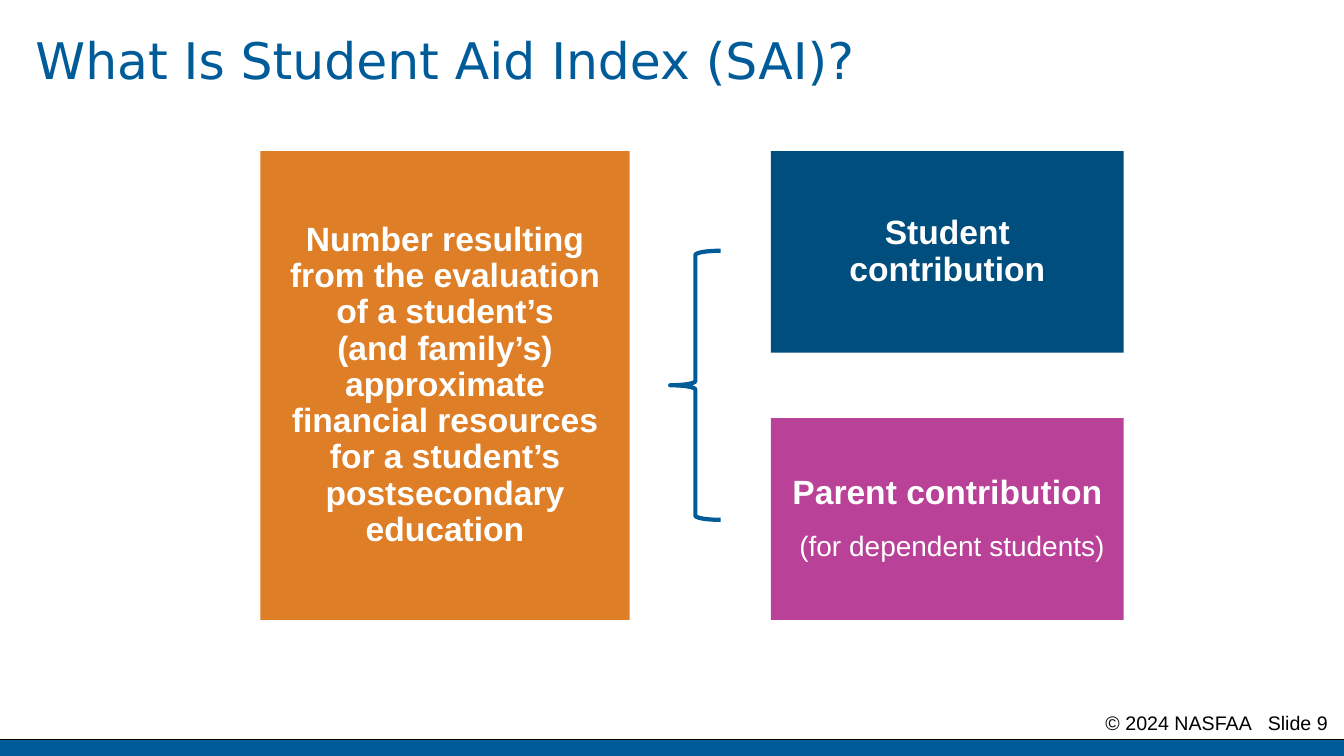
from dataclasses import dataclass

from lxml.etree import SubElement
from pptx import Presentation
from pptx.dml.color import RGBColor as Rgb
from pptx.enum.shapes import MSO_CONNECTOR as Link, MSO_SHAPE as Form
from pptx.enum.text import MSO_ANCHOR as Anchor, MSO_AUTO_SIZE as Fit, PP_ALIGN as Align
from pptx.oxml.ns import qn
from pptx.shapes.autoshape import Shape
from pptx.slide import Slide
from pptx.text.text import _Paragraph as Para
from pptx.util import Cm, Pt


@dataclass(frozen=True)
class Theme:
    blue: str = "005B99"
    navy: str = "004E7D"
    orange: str = "DE7E26"
    pink: str = "B94197"
    white: str = "FFFFFF"
    black: str = "000000"
    head: str = "DejaVu Sans"
    body: str = "Arial"
    title: int = 36
    main: int = 24
    sub: int = 20
    foot: int = 14


@dataclass(frozen=True)
class Line:
    text: str
    size: int
    bold: bool = True
    indent: float = 0


@dataclass(frozen=True)
class Card:
    left: float
    top: float
    width: float
    height: float
    fill: str
    lines: tuple[Line, ...]


THEME = Theme()
WIDE, HIGH = 33.87, 19.05
TOP, ROW, GAP = 3.81, 5.08, 1.65
RIGHT, SPAN = 19.43, 8.89
BASE = 18.63

CARDS = (
    Card(6.56, TOP, 9.31, 2 * ROW + GAP, THEME.orange, (
        Line("Number resulting from the evaluation of a student’s\v(and family’s) "
             "approximate financial resources for a student’s postsecondary education",
             THEME.main),)),
    Card(RIGHT, TOP, SPAN, ROW, THEME.navy, (
        Line("Student contribution", THEME.main),)),
    Card(RIGHT, TOP + ROW + GAP, SPAN, ROW, THEME.pink, (
        Line("Parent contribution", THEME.main),
        Line("(for dependent students)", THEME.sub, False, 0.24))),
)


def write(para: Para, text: str, size: int, color: str,
          face: str = THEME.body, bold: bool = False) -> None:
    for i, part in enumerate(text.split("\v")):
        if i:
            para.add_line_break()
        run = para.add_run()
        run.text = part
        font = run.font
        font.name, font.size, font.bold = face, Pt(size), bold
        font.color.rgb = Rgb.from_string(color)


def block(slide: Slide, left: float, top: float, width: float,
          height: float, fill: str) -> Shape:
    shape = slide.shapes.add_shape(Form.RECTANGLE, Cm(left), Cm(top), Cm(width), Cm(height))
    shape.shadow.inherit = False
    shape.fill.solid()
    shape.fill.fore_color.rgb = Rgb.from_string(fill)
    shape.line.fill.background()
    return shape


def draw(slide: Slide, card: Card) -> None:
    frame = block(slide, card.left, card.top, card.width, card.height, card.fill).text_frame
    frame.word_wrap = True
    frame.vertical_anchor = Anchor.MIDDLE
    frame.margin_left = frame.margin_right = Cm(0.38)
    frame.margin_top = frame.margin_bottom = Cm(0.38)
    for i, line in enumerate(card.lines):
        para = frame.add_paragraph() if i else frame.paragraphs[0]
        para.alignment = Align.CENTER
        para.line_spacing = 0.9
        if i:
            para.space_before = Pt(15)
        if line.indent:
            para._p.get_or_add_pPr().set("marL", str(Cm(line.indent)))
        write(para, line.text, line.size, THEME.white, bold=line.bold)


def footer(slide: Slide) -> None:
    block(slide, 0, BASE, WIDE, HIGH - BASE, THEME.blue)
    rule = slide.shapes.add_connector(Link.STRAIGHT, 0, Cm(BASE), Cm(WIDE), Cm(BASE))
    rule.line.width = Pt(1)
    rule.line.color.rgb = Rgb.from_string(THEME.black)
    SubElement(rule._element.spPr, qn("a:effectLst"))

    frame = slide.shapes.add_textbox(Cm(27.61), Cm(17.78), Cm(6.2), Cm(0.64)).text_frame
    frame.word_wrap = True
    para = frame.paragraphs[0]
    tabs = SubElement(para._p.get_or_add_pPr(), qn("a:tabLst"))
    SubElement(tabs, qn("a:tab"), pos=str(Cm(4.09)), algn="l")
    write(para, "© 2024 NASFAA\tSlide 9", THEME.foot, THEME.black)


def heading(slide: Slide) -> None:
    title = slide.shapes.title
    title.left, title.top, title.width, title.height = Cm(0.64), Cm(0), Cm(28.79), Cm(3.18)
    frame = title.text_frame
    frame.auto_size = Fit.NONE
    frame.vertical_anchor = Anchor.MIDDLE
    para = frame.paragraphs[0]
    para.alignment = Align.LEFT
    para.line_spacing = 0.9
    write(para, "What Is Student Aid Index (SAI)?", THEME.title, THEME.blue, THEME.head)


def brace(slide: Slide) -> None:
    shape = slide.shapes.add_shape(Form.LEFT_BRACE, Cm(16.89), Cm(6.32), Cm(1.27), Cm(6.78))
    shape.shadow.inherit = False
    shape.fill.background()
    shape.line.color.rgb = Rgb.from_string(THEME.blue)
    shape.line.width = Pt(3)


def main() -> None:
    deck = Presentation()
    deck.slide_width, deck.slide_height = Cm(WIDE), Cm(HIGH)
    slide = deck.slides.add_slide(deck.slide_layouts[5])

    # Title and footer
    heading(slide)
    footer(slide)

    # Cards joined by the brace
    for card in CARDS:
        draw(slide, card)
    brace(slide)

    deck.save("out.pptx")


if __name__ == "__main__":
    main()
